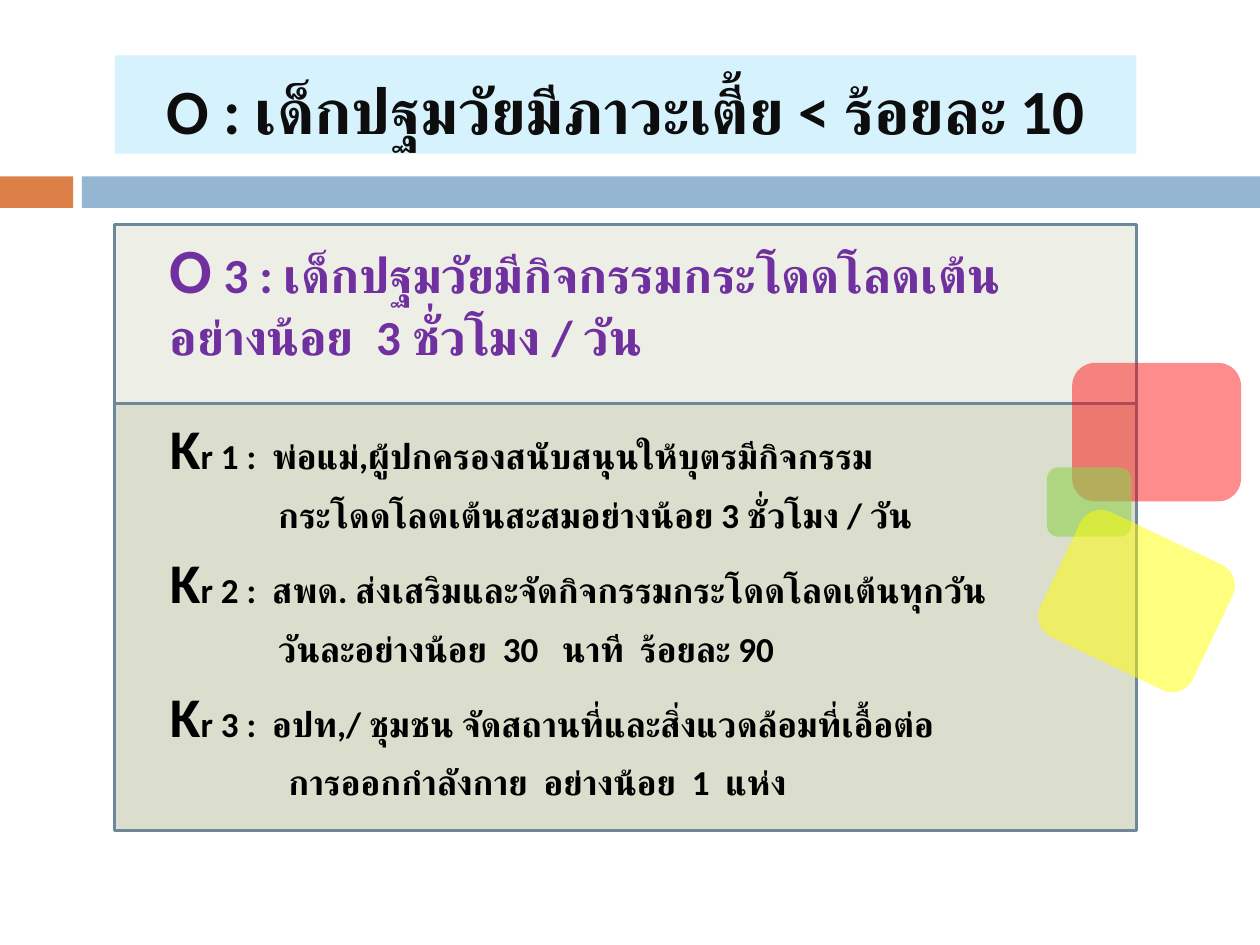
import pptx
import pptx.dml.color
import pptx.enum.shapes
import pptx.enum.text
import pptx.oxml.ns
import pptx.util
from lxml import etree
from pptx.util import Inches

PANEL_LEFT, PANEL_WIDTH = 0.91, 8.11
PANEL_LINE = "6D879B"
PURPLE = "7030A0"
BLACK = "000000"

presentation = pptx.Presentation()
presentation.slide_width = Inches(10)
presentation.slide_height = Inches(7.5)
slide = presentation.slides.add_slide(presentation.slide_layouts[6])


def color(value):
    return pptx.dml.color.RGBColor.from_string(value)


def add_text(paragraph, text, size, ink):
    """Add a bold run with the same font for Latin and Thai letters."""
    run = paragraph.add_run()
    run.text = text
    run.font.name = "Calibri"
    run.font.size = pptx.util.Pt(size)
    run.font.bold = True
    run.font.color.rgb = color(ink)
    thai_font = etree.SubElement(run.font._element, pptx.oxml.ns.qn("a:cs"))
    thai_font.set("typeface", "Calibri")


# left, top, width, height, fill, opacity in percent, line, rounded, rotation
blocks = {
    "accent": (0, 1.4, 0.58, 0.25, "DD8047", 100, None, False, 0),
    "band": (0.65, 1.4, 9.35, 0.25, "94B6D2", 100, None, False, 0),
    "key results": (PANEL_LEFT, 3.2, PANEL_WIDTH, 3.39, "DBDDCD", 100, PANEL_LINE, False, 0),
    "objective": (PANEL_LEFT, 1.78, PANEL_WIDTH, 1.42, "EDEEE6", 100, PANEL_LINE, False, 0),
    "body": None,
    "title": (PANEL_LEFT, 0.44, PANEL_WIDTH, 0.78, "00B0F0", 16, None, False, 0),
    "red tile": (8.51, 2.88, 1.34, 1.1, "FF0000", 45, None, True, 0),
    "green tile": (8.31, 3.71, 0.67, 0.55, "92D050", 61, None, True, 0),
    "yellow tile": (8.35, 4.22, 1.34, 1.1, "FFFF00", 50, None, True, 25.4),
}
shapes = {}
for name, block in blocks.items():
    if block is None:
        shapes[name] = slide.shapes.add_textbox(
            Inches(1.25), Inches(1.78), Inches(7.41), Inches(3.54))
        continue
    left, top, width, height, fill, opacity, line, rounded, rotation = block
    kinds = pptx.enum.shapes.MSO_SHAPE
    shape = slide.shapes.add_shape(
        kinds.ROUNDED_RECTANGLE if rounded else kinds.RECTANGLE,
        Inches(left), Inches(top), Inches(width), Inches(height))
    shape.shadow.inherit = False
    shape.rotation = rotation
    shape.fill.solid()
    shape.fill.fore_color.rgb = color(fill)
    if opacity < 100:
        fill_color = shape.fill._xPr.find(".//" + pptx.oxml.ns.qn("a:srgbClr"))
        alpha = etree.SubElement(fill_color, pptx.oxml.ns.qn("a:alpha"))
        alpha.set("val", str(opacity * 1000))
    if line:
        shape.line.color.rgb = color(line)
        shape.line.width = pptx.util.Pt(1.5)
    else:
        shape.line.fill.background()
    shapes[name] = shape

title_frame = shapes["title"].text_frame
title_frame.word_wrap = True
title_frame.vertical_anchor = pptx.enum.text.MSO_ANCHOR.BOTTOM
title = title_frame.paragraphs[0]
title.alignment = pptx.enum.text.PP_ALIGN.CENTER
add_text(title, "O : เด็กปฐมวัยมีภาวะเตี้ย < ร้อยละ 10", size=36, ink="0D0D0D")

body_frame = shapes["body"].text_frame
body_frame.word_wrap = True
objective = body_frame.paragraphs[0]
objective.space_before = pptx.util.Pt(7)
add_text(objective, "O", size=36, ink=PURPLE)
add_text(objective, " 3 : เด็กปฐมวัยมีกิจกรรมกระโดดโลดเต้นอย่างน้อย  3 ชั่วโมง / วัน",
         size=28, ink=PURPLE)

# space before, first line, second line, indent of the second line
key_results = [
    (28, "r 1 :  พ่อแม่,ผู้ปกครองสนับสนุนให้บุตรมีกิจกรรม",
     "กระโดดโลดเต้นสะสมอย่างน้อย 3 ชั่วโมง / วัน", 0.86),
    (7, "r 2 :  สพด. ส่งเสริมและจัดกิจกรรมกระโดดโลดเต้นทุกวัน",
     "วันละอย่างน้อย  30   นาที  ร้อยละ 90", 0.86),
    (7, "r 3 :  อปท,/ ชุมชน จัดสถานที่และสิ่งแวดล้อมที่เอื้อต่อ",
     "การออกกำลังกาย  อย่างน้อย  1  แห่ง", 0.94),
]
for gap, first_line, second_line, indent in key_results:
    paragraph = body_frame.add_paragraph()
    paragraph.space_before = pptx.util.Pt(gap)
    add_text(paragraph, "K", size=32, ink=BLACK)
    add_text(paragraph, first_line, size=20, ink=BLACK)

    paragraph = body_frame.add_paragraph()
    paragraph.space_before = pptx.util.Pt(7)
    paragraph._p.get_or_add_pPr().set("marL", str(Inches(indent)))
    add_text(paragraph, second_line, size=20, ink=BLACK)

presentation.save("out.pptx")
